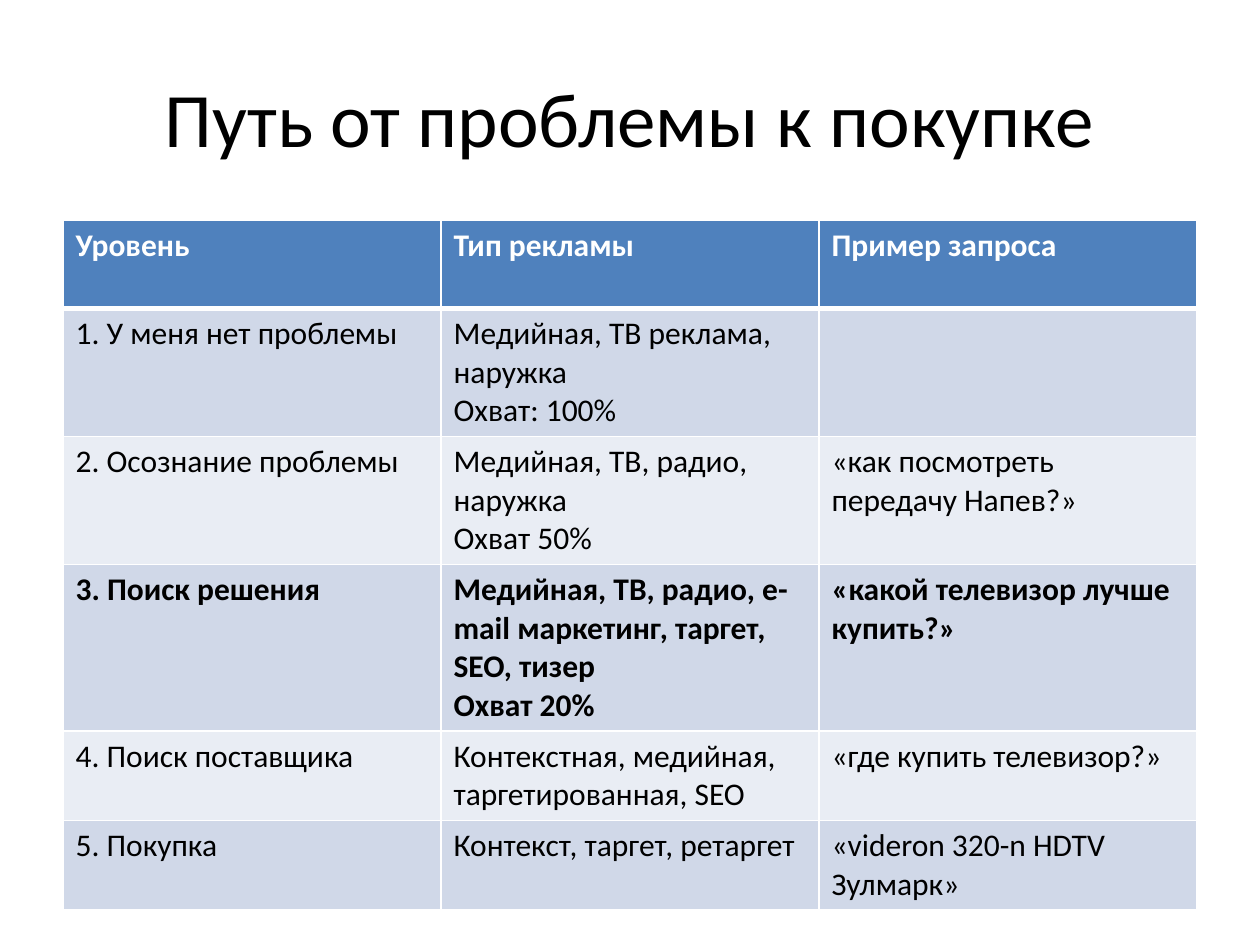
from dataclasses import dataclass

import pptx
import pptx.dml.color
import pptx.enum.text
import pptx.oxml
import pptx.oxml.ns
import pptx.util
from pptx.util import Inches

FONT = "Calibri"
WHITE, BLACK = "FFFFFF", "000000"
HEADER_FILL = "4F81BD"
BAND_FILLS = ("D0D8E8", "E9EDF4")
ROW_HEIGHT = 0.7
COLUMN_WIDTH = 3


@dataclass
class TableRow:
    level: str
    advertising: str
    query: str
    bold: bool = False


HEADER = TableRow("Уровень", "Тип рекламы", "Пример запроса", bold=True)
STAGES = [
    TableRow("1. У меня нет проблемы", "Медийная, ТВ реклама, наружка\nОхват: 100%", ""),
    TableRow("2. Осознание проблемы", "Медийная, ТВ, радио, наружка\nОхват 50%",
             "«как посмотреть передачу Напев?»"),
    TableRow("3. Поиск решения",
             "Медийная, ТВ, радио, e-mail маркетинг, таргет, SEO, тизер\nОхват 20%",
             "«какой телевизор лучше купить?»", bold=True),
    TableRow("4. Поиск поставщика", "Контекстная, медийная, таргетированная, SEO",
             "«где купить телевизор?»"),
    TableRow("5. Покупка", "Контекст, таргет, ретаргет", "«videron 320-n HDTV Зулмарк»"),
]


def rgb(color: str) -> pptx.dml.color.RGBColor:
    return pptx.dml.color.RGBColor.from_string(color)


def format_font(font, size: float, color: str, bold: bool = False) -> None:
    values = {"name": FONT, "size": pptx.util.Pt(size), "bold": bold}
    for attribute, value in values.items():
        setattr(font, attribute, value)
    font.color.rgb = rgb(color)


def set_borders(cell, bottom_width: float) -> None:
    properties = cell._tc.get_or_add_tcPr()
    widths = {"lnL": 1, "lnR": 1, "lnT": 1, "lnB": bottom_width}
    for position, (side, width) in enumerate(widths.items()):
        line = pptx.oxml.parse_xml(
            f'<a:{side} {pptx.oxml.ns.nsdecls("a")} w="{pptx.util.Pt(width)}">'
            f'<a:solidFill><a:srgbClr val="{WHITE}"/></a:solidFill></a:{side}>'
        )
        properties.insert(position, line)


def fill_row(cells, row: TableRow, fill: str, color: str, bottom_width: float = 1) -> None:
    for cell, text in zip(cells, (row.level, row.advertising, row.query)):
        cell.text = text
        cell.fill.solid()
        cell.fill.fore_color.rgb = rgb(fill)
        set_borders(cell, bottom_width)
        for paragraph in cell.text_frame.paragraphs:
            for run in paragraph.runs:
                format_font(run.font, 18, color, row.bold)


def add_title(slide, text: str) -> None:
    title = slide.shapes.title
    title.left, title.top = Inches(0.5), Inches(0.3)
    title.width, title.height = Inches(9), Inches(1.25)
    title.text_frame.text = text
    title.text_frame.vertical_anchor = pptx.enum.text.MSO_ANCHOR.MIDDLE
    paragraph = title.text_frame.paragraphs[0]
    paragraph.alignment = pptx.enum.text.PP_ALIGN.CENTER
    format_font(paragraph.runs[0].font, 44, BLACK)


def add_stage_table(slide) -> None:
    row_count = len(STAGES) + 1
    table = slide.shapes.add_table(
        row_count, 3, Inches(0.5), Inches(1.75),
        Inches(3 * COLUMN_WIDTH), Inches(row_count * ROW_HEIGHT),
    ).table
    header_cells, *stage_cells = [row.cells for row in table.rows]
    fill_row(header_cells, HEADER, HEADER_FILL, WHITE, bottom_width=3)
    for index, (cells, stage) in enumerate(zip(stage_cells, STAGES)):
        fill_row(cells, stage, BAND_FILLS[index % 2], BLACK)


def main() -> None:
    presentation = pptx.Presentation()
    presentation.slide_width, presentation.slide_height = Inches(10), Inches(7.5)
    slide = presentation.slides.add_slide(presentation.slide_layouts[5])
    add_title(slide, "Путь от проблемы к покупке")
    add_stage_table(slide)
    presentation.save("out.pptx")


if __name__ == "__main__":
    main()
